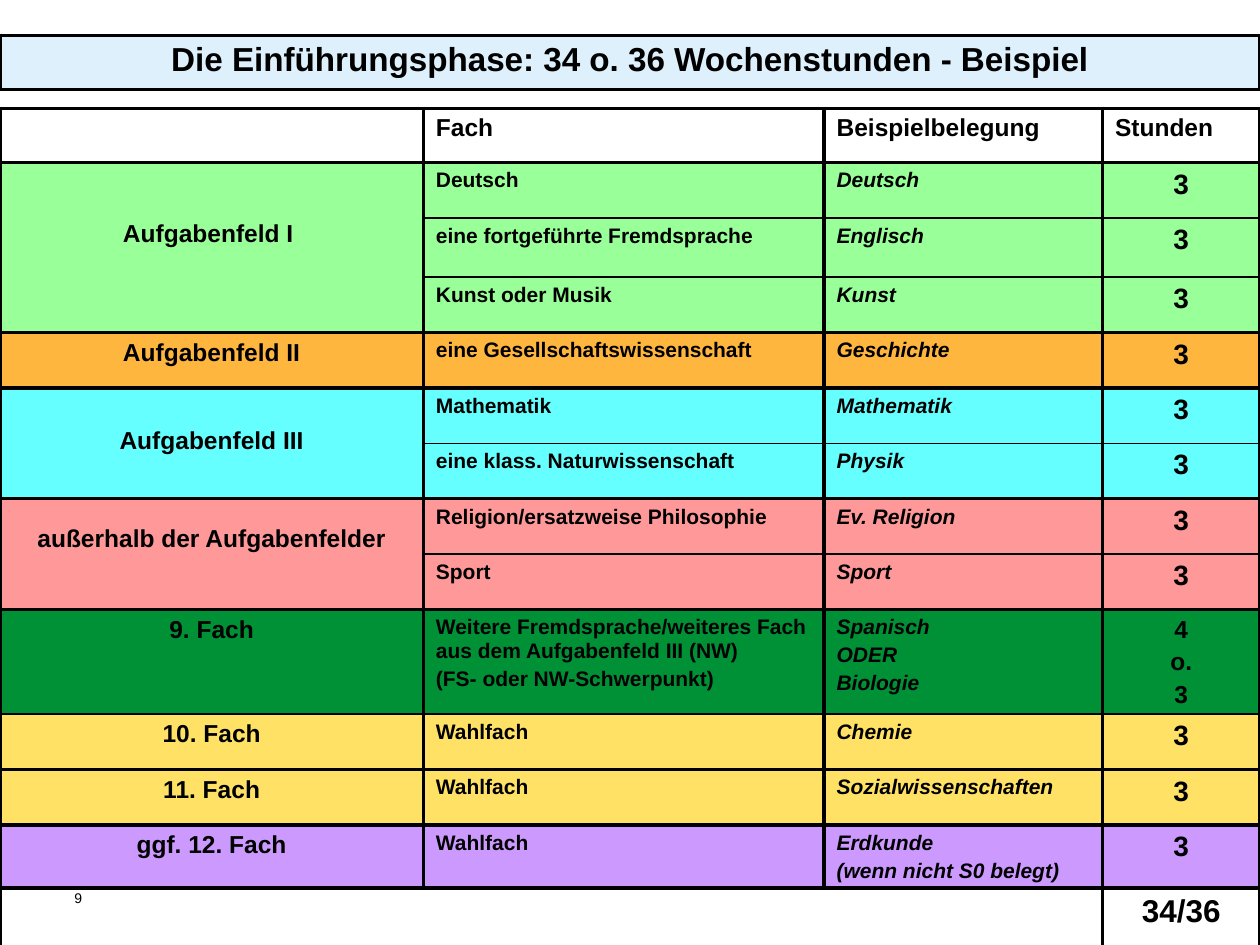
import pptx
import pptx.dml.color
import pptx.enum.text
import pptx.oxml
import pptx.util
from pptx.util import Inches


class Theme:
    font = "Arial"
    black, title_fill = "000000", "DDF0FB"
    green, orange, cyan, pink = "99FF99", "FFB63F", "66FFFF", "FF9999"
    dark_green, yellow, violet = "009036", "FFE265", "CC99FF"
    page, body, label, hours, total, title = 8, 12, 14, 16, 18, 19
    thick, thin = 2.25, 1


LEFT, CENTER = pptx.enum.text.PP_ALIGN.LEFT, pptx.enum.text.PP_ALIGN.CENTER


def write(tf, text, size, align=LEFT, bold=True, italic=False):
    """Put each line of text into its own paragraph."""
    tf.text = text
    for i, p in enumerate(tf.paragraphs):
        p.alignment = align
        if i:
            p.space_before = pptx.util.Pt(0.2 * size)
        p.font.name = Theme.font
        p.font.size = pptx.util.Pt(size)
        p.font.bold = bold
        p.font.italic = italic
        p.font.color.rgb = pptx.dml.color.RGBColor.from_string(Theme.black)


def style_cell(cell, color=None, top=Theme.thick, bottom=Theme.thick):
    """Draw the borders of a cell, then its fill."""
    tc_pr = cell._tc.get_or_add_tcPr()
    widths = {"lnL": Theme.thick, "lnR": Theme.thick, "lnT": top, "lnB": bottom}
    for side, width in widths.items():
        tc_pr.append(pptx.oxml.parse_xml(
            f'<a:{side} xmlns:a="http://schemas.openxmlformats.org/drawingml/2006/main"'
            f' w="{pptx.util.Pt(width)}"><a:solidFill><a:srgbClr val="{Theme.black}"/>'
            f'</a:solidFill></a:{side}>'))
    if color:
        cell.fill.solid()
        cell.fill.fore_color.rgb = pptx.dml.color.RGBColor.from_string(color)
    else:
        cell.fill.background()


prs = pptx.Presentation()
prs.slide_width, prs.slide_height = Inches(10), Inches(7.5)
s = prs.slides.add_slide(prs.slide_layouts[6])

# Page number
tf = s.shapes.add_textbox(Inches(0.59), Inches(7.06), Inches(0.32), Inches(0.37)).text_frame
tf.word_wrap = True
tf.margin_left = tf.margin_right = tf.margin_top = tf.margin_bottom = 0
write(tf, "9", Theme.page, bold=False)

# Title bar
title = s.shapes.add_table(1, 1, 0, Inches(0.28), Inches(10), Inches(0.43)).table
title.first_row = title.horz_banding = False
write(title.cell(0, 0).text_frame, "Die Einführungsphase: 34 o. 36 Wochenstunden - Beispiel",
      Theme.title, CENTER)
style_cell(title.cell(0, 0), Theme.title_fill)

# Timetable: group label, top margin of the label, fill, (subject, example, hours)
groups = [
    ("Aufgabenfeld I ", 0.46, Theme.green, [
        ("Deutsch", "Deutsch", "3"),
        ("eine fortgeführte Fremdsprache", "Englisch", "3"),
        ("Kunst oder Musik", "Kunst", "3")]),
    ("Aufgabenfeld II", 0.05, Theme.orange, [
        ("eine Gesellschaftswissenschaft", "Geschichte", "3")]),
    ("Aufgabenfeld III", 0.31, Theme.cyan, [
        ("Mathematik", "Mathematik", "3"),
        ("eine klass. Naturwissenschaft", "Physik", "3")]),
    ("außerhalb der Aufgabenfelder", 0.21, Theme.pink, [
        ("Religion/ersatzweise Philosophie", "Ev. Religion", "3"),
        ("Sport", "Sport", "3")]),
    ("9. Fach", 0.05, Theme.dark_green, [
        ("Weitere Fremdsprache/weiteres Fach aus dem Aufgabenfeld III (NW)\n"
         "(FS- oder NW-Schwerpunkt)", "Spanisch\nODER\nBiologie", "4\no.\n3")]),
    ("10. Fach", 0.05, Theme.yellow, [("Wahlfach", "Chemie", "3")]),
    ("11. Fach", 0.05, Theme.yellow, [("Wahlfach", "Sozialwissenschaften", "3")]),
    ("ggf. 12. Fach", 0.05, Theme.violet, [
        ("Wahlfach", "Erdkunde\n(wenn nicht S0 belegt)", "3")]),
]
col_widths = [3.36, 3.18, 2.21, 1.25]
row_heights = [0.43, 0.44, 0.47] + [0.44] * 6 + [0.83, 0.44, 0.44, 0.5, 0.48]
last = len(row_heights) - 1

table = s.shapes.add_table(len(row_heights), len(col_widths), 0, Inches(0.86),
                           Inches(10), Inches(sum(row_heights))).table
table.first_row = table.horz_banding = False
for column, width in zip(table.columns, col_widths):
    column.width = Inches(width)
for row, height in zip(table.rows, row_heights):
    row.height = Inches(height)

style_cell(table.cell(0, 0))
for c, heading in enumerate(["Fach", "Beispielbelegung", "Stunden"], start=1):
    write(table.cell(0, c).text_frame, heading, Theme.label)
    style_cell(table.cell(0, c))

r = 1
for label, margin, color, lessons in groups:
    first, end = r, r + len(lessons) - 1
    label_cell = table.cell(first, 0)
    if end > first:
        label_cell.merge(table.cell(end, 0))
    label_cell.margin_top = Inches(margin)
    write(label_cell.text_frame, label, Theme.label, CENTER)
    # The line between the 9th and 10th subject is thin as well
    outer_top = Theme.thin if label == "10. Fach" else Theme.thick
    outer_bottom = Theme.thin if label == "9. Fach" else Theme.thick
    style_cell(label_cell, color, outer_top, outer_bottom)
    for subject, example, hours in lessons:
        write(table.cell(r, 1).text_frame, subject, Theme.body)
        write(table.cell(r, 2).text_frame, example, Theme.body, italic=True)
        write(table.cell(r, 3).text_frame, hours,
              Theme.label if "\n" in hours else Theme.hours, CENTER)
        for c in range(1, 4):
            cell = table.cell(r, c)
            # Several lines need the whole row height
            if len(cell.text_frame.paragraphs) > 1:
                cell.margin_bottom = 0
            style_cell(cell, color,
                       outer_top if r == first else Theme.thin,
                       outer_bottom if r == end else Theme.thin)
        r += 1

# Total
table.cell(last, 0).merge(table.cell(last, 2))
style_cell(table.cell(last, 0))
write(table.cell(last, 3).text_frame, "34/36", Theme.total, CENTER)
style_cell(table.cell(last, 3))

prs.save("out.pptx")
